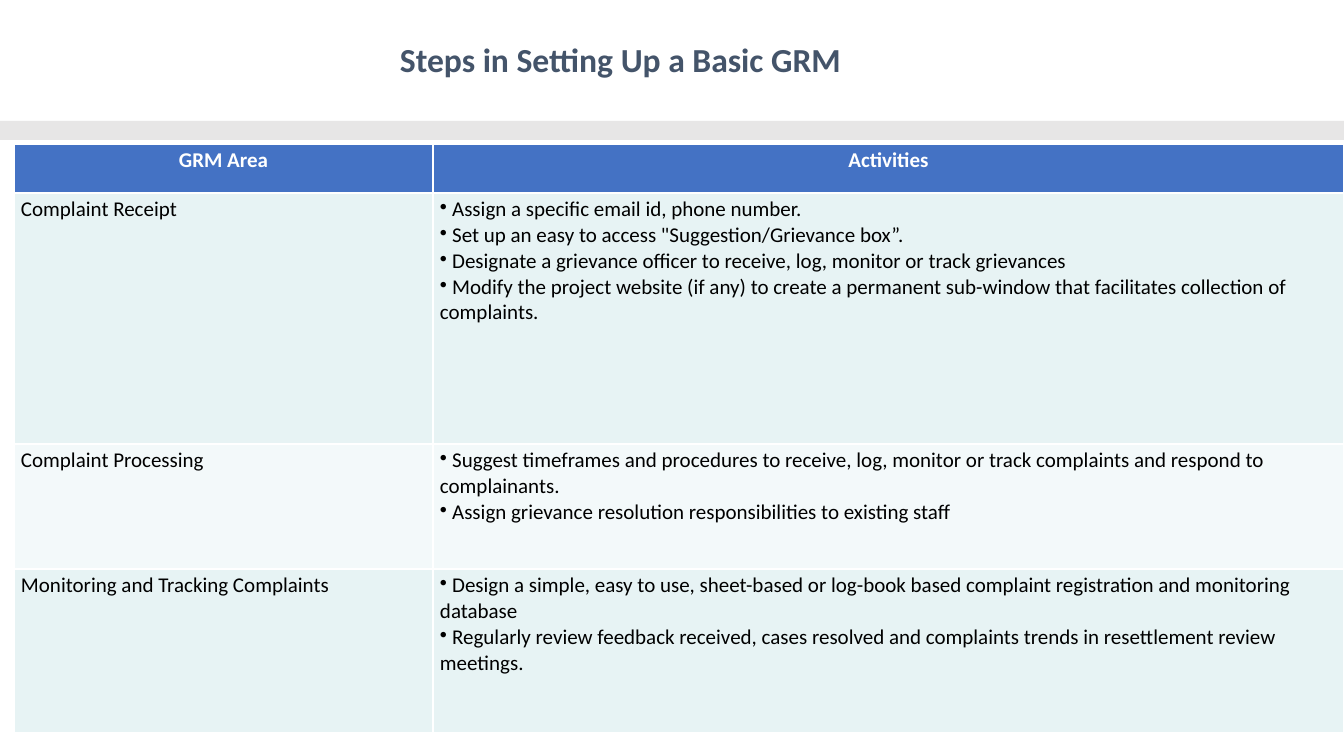
import pptx
import pptx.dml.color
import pptx.enum.shapes
import pptx.enum.text
import pptx.oxml.ns
import pptx.util
from lxml import etree

EMU_PER_PIXEL = 914400 / 100.8
FONT = "Calibri"
COLORS = {
    "title": "44546A",
    "band": "E7E6E6",
    "header": "4472C4",
    "header_text": "FFFFFF",
    "text": "000000",
    "odd_row": "E7F3F4",
    "even_row": "F3F9FA",
}
HEADINGS = ["GRM Area", "Activities"]
STEPS = [
    ("Complaint Receipt", [
        "Assign a specific email id, phone number.",
        "Set up an easy to access \"Suggestion/Grievance box”.",
        "Designate a grievance officer to receive, log, monitor or track grievances",
        "Modify the project website (if any) to create a permanent sub-window "
        "that facilitates collection of complaints.",
    ]),
    ("Complaint Processing", [
        "Suggest timeframes and procedures to receive, log, monitor or track "
        "complaints and respond to complainants.",
        "Assign grievance resolution responsibilities to existing staff",
    ]),
    ("Monitoring and Tracking Complaints", [
        "Design a simple, easy to use, sheet-based or log-book based complaint "
        "registration and monitoring database",
        "Regularly review feedback received, cases resolved and complaints trends "
        "in resettlement review meetings.",
    ]),
]
COLUMN_WIDTHS = [419, 911]
ROW_HEIGHTS = [49, 251, 125, 164]


def px(length):
    """Turn a length in pixels into EMU."""
    return pptx.util.Emu(round(length * EMU_PER_PIXEL))


def rgb(name):
    """Return the named colour."""
    return pptx.dml.color.RGBColor.from_string(COLORS[name])


def set_margins(frame):
    """Give a text frame or table cell the slide's inner margins."""
    frame.margin_left = frame.margin_right = px(7)
    frame.margin_top = frame.margin_bottom = px(4)


def write_text(paragraph, text, size=15, color="text", bold=False,
               align=pptx.enum.text.PP_ALIGN.LEFT, bullet=False):
    """Write one formatted run, with a bullet if asked."""
    paragraph.alignment = align
    if bullet:
        properties = paragraph._p.get_or_add_pPr()
        properties.set("marL", "0")
        properties.set("indent", "0")
        mark = etree.SubElement(properties, pptx.oxml.ns.qn("a:buChar"))
        mark.set("char", "•")
        text = " " + text
    run = paragraph.add_run()
    run.text = text
    run.font.name = FONT
    run.font.size = pptx.util.Pt(size)
    run.font.bold = bold
    run.font.color.rgb = rgb(color)


def add_band(slide, left, top, width, height):
    """Draw the plain band under the title."""
    band = slide.shapes.add_shape(
        pptx.enum.shapes.MSO_SHAPE.RECTANGLE, px(left), px(top), px(width), px(height))
    band.shadow.inherit = False
    band.fill.solid()
    band.fill.fore_color.rgb = rgb("band")
    band.line.fill.background()


def fill_title(slide, text, left, top, width, height):
    """Place and write the title placeholder."""
    title = slide.shapes.title
    title.left, title.top = px(left), px(top)
    title.width, title.height = px(width), px(height)
    frame = title.text_frame
    frame.word_wrap = True
    frame.auto_size = pptx.enum.text.MSO_AUTO_SIZE.NONE
    frame.vertical_anchor = pptx.enum.text.MSO_ANCHOR.MIDDLE
    set_margins(frame)
    paragraph = frame.paragraphs[0]
    paragraph.line_spacing = 0.9
    write_text(paragraph, text, size=24, color="title", bold=True,
               align=pptx.enum.text.PP_ALIGN.CENTER)


def fill_cell(cell, lines, fill, **text_format):
    """Fill a table cell and write one paragraph per line."""
    cell.fill.solid()
    cell.fill.fore_color.rgb = rgb(fill)
    set_margins(cell)
    frame = cell.text_frame
    for index, line in enumerate(lines):
        paragraph = frame.add_paragraph() if index else frame.paragraphs[0]
        write_text(paragraph, line, **text_format)


def add_steps_table(slide, left, top):
    """Add the table of GRM areas and their activities."""
    table = slide.shapes.add_table(
        len(ROW_HEIGHTS), len(COLUMN_WIDTHS), px(left), px(top),
        px(sum(COLUMN_WIDTHS)), px(sum(ROW_HEIGHTS))).table
    for column, width in zip(table.columns, COLUMN_WIDTHS):
        column.width = px(width)
    for row, height in zip(table.rows, ROW_HEIGHTS):
        row.height = px(height)
    for index, heading in enumerate(HEADINGS):
        fill_cell(table.cell(0, index), [heading], "header", color="header_text",
                  bold=True, align=pptx.enum.text.PP_ALIGN.CENTER)
    for index, (area, activities) in enumerate(STEPS, start=1):
        fill = "odd_row" if index % 2 else "even_row"
        fill_cell(table.cell(index, 0), [area], fill)
        fill_cell(table.cell(index, 1), activities, fill, bullet=True)


def main():
    """Build the slide and save it."""
    presentation = pptx.Presentation()
    presentation.slide_width, presentation.slide_height = px(1344), px(756)
    slide = presentation.slides.add_slide(presentation.slide_layouts[5])
    add_band(slide, 0, 121, 1344, 19)
    fill_title(slide, "Steps in Setting Up a Basic GRM", 89, 0, 1063, 123)
    add_steps_table(slide, 14, 144)
    presentation.save("out.pptx")


if __name__ == "__main__":
    main()
